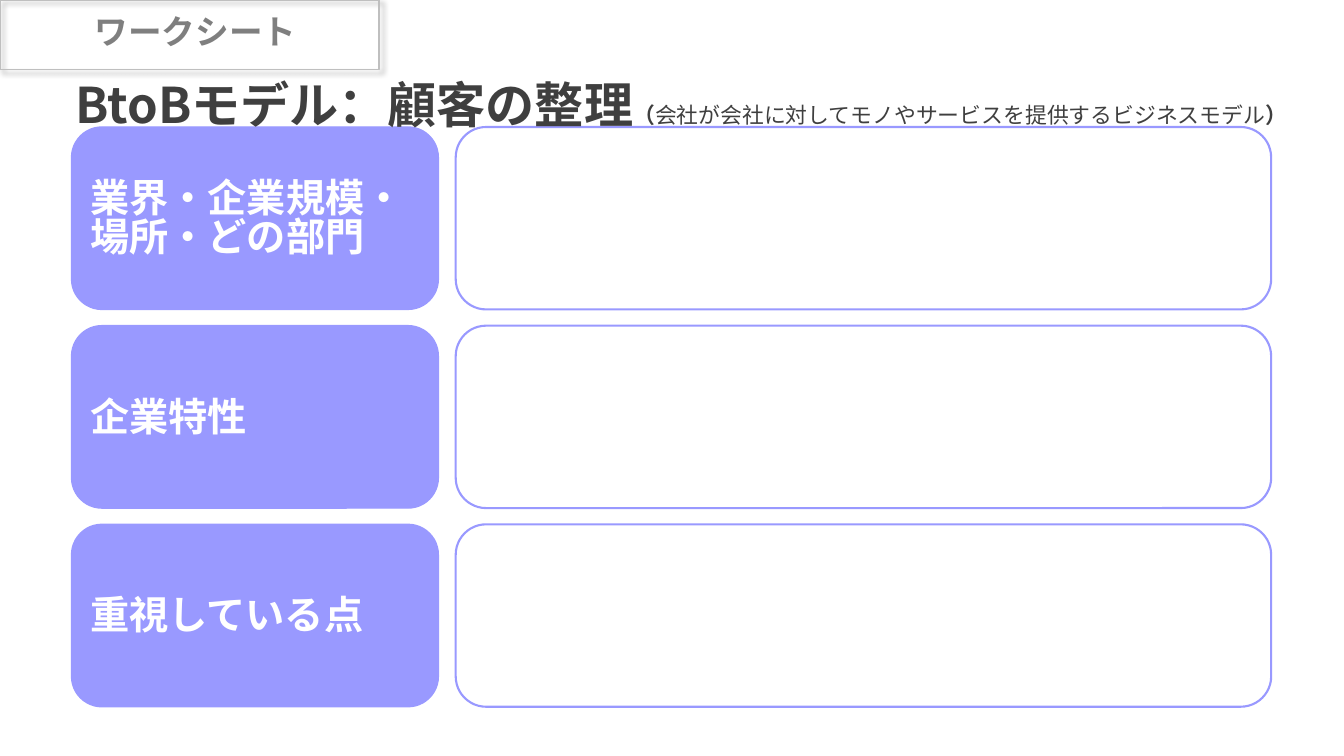
"""Build a worksheet slide for organising the customers of a BtoB business."""
from dataclasses import dataclass

from lxml import etree
from pptx import Presentation
from pptx.dml.color import RGBColor
from pptx.enum.shapes import MSO_SHAPE
from pptx.enum.text import MSO_ANCHOR, MSO_AUTO_SIZE, PP_ALIGN
from pptx.oxml.ns import qn
from pptx.shapes.autoshape import Shape
from pptx.slide import Slide
from pptx.text.text import TextFrame, _Paragraph, _Run
from pptx.util import Pt

RECTANGLE = MSO_SHAPE.RECTANGLE
ROUNDED = MSO_SHAPE.ROUNDED_RECTANGLE
MIDDLE = MSO_ANCHOR.MIDDLE
BOTTOM = MSO_ANCHOR.BOTTOM
GROW = MSO_AUTO_SIZE.SHAPE_TO_FIT_TEXT
LEFT = PP_ALIGN.LEFT
CENTER = PP_ALIGN.CENTER


@dataclass(frozen=True)
class Theme:
    font: str = "Noto Sans CJK JP"
    accent: str = "9999FF"
    label: str = "FFFFFF"
    title: str = "3F3F3F"
    tag: str = "7F7F7F"
    tag_line: str = "BFBFBF"
    shadow: str = "000000"
    title_size: float = 35.1
    note_size: float = 15.6
    label_size: float = 28
    tag_size: float = 24
    title_spacing: float = 0.9
    text_spacing: float = 0.83


@dataclass(frozen=True)
class Box:
    left: float
    top: float
    width: float
    height: float

    def lengths(self) -> tuple[Pt, Pt, Pt, Pt]:
        return Pt(self.left), Pt(self.top), Pt(self.width), Pt(self.height)


@dataclass(frozen=True)
class TitlePart:
    text: str
    size: float
    bold: bool


THEME = Theme()
TITLE_BOX = Box(31, 46, 911.5, 49.7)
TAG_FRAME = Box(0, 0, 270.7, 49.7)
TAG_TEXT = Box(8.6, 9.4, 262, 36)
ROW_TOP, ROW_PITCH, ROW_HEIGHT = 90.7, 141.9, 130.3
LABEL_LEFT, LABEL_WIDTH = 51.1, 262
ANSWER_LEFT, ANSWER_WIDTH = 325.5, 582.5
ROW_LABELS = ("業界・企業規模・\n場所・どの部門", "企業特性", "重視している点")
TITLE_PARTS = (
    TitlePart("BtoBモデル：顧客の整理", THEME.title_size, True),
    TitlePart("（", THEME.note_size, True),
    TitlePart("会社が会社に対してモノやサービスを提供するビジネスモデル", THEME.note_size, False),
    TitlePart("）", THEME.note_size, True),
)


def format_run(run: _Run, size: float, color: str, bold: bool = True) -> None:
    run.font.size = Pt(size)
    run.font.bold = bold
    run.font.color.rgb = RGBColor.from_string(color)
    run.font.name = THEME.font
    east_asian = etree.Element(qn("a:ea"), typeface=THEME.font)
    run.font._element.find(qn("a:latin")).addnext(east_asian)


def format_paragraph(paragraph: _Paragraph, size: float, color: str, alignment: PP_ALIGN) -> None:
    paragraph.alignment = alignment
    paragraph.line_spacing = THEME.text_spacing
    for run in paragraph.runs:
        format_run(run, size, color)


def set_margins(frame: TextFrame, side: float, top: float, bottom: float) -> None:
    frame.word_wrap = True
    frame.margin_left = frame.margin_right = Pt(side)
    frame.margin_top, frame.margin_bottom = Pt(top), Pt(bottom)


def outline(shape: Shape, color: str, width: float) -> None:
    shape.fill.background()
    shape.line.color.rgb = RGBColor.from_string(color)
    shape.line.width = Pt(width)
    shape.shadow.inherit = False


def add_answer(slide: Slide, box: Box) -> None:
    outline(slide.shapes.add_shape(ROUNDED, *box.lengths()), THEME.accent, 1.5)


def add_label(slide: Slide, box: Box, text: str) -> None:
    shape = slide.shapes.add_shape(ROUNDED, *box.lengths())
    outline(shape, THEME.accent, 1)
    shape.fill.solid()
    shape.fill.fore_color.rgb = RGBColor.from_string(THEME.accent)
    frame = shape.text_frame
    set_margins(frame, 7.2, 3.6, 0)
    frame.vertical_anchor = MIDDLE
    frame.text = text
    for paragraph in frame.paragraphs:
        format_paragraph(paragraph, THEME.label_size, THEME.label, LEFT)


def add_title(slide: Slide) -> None:
    frame = slide.shapes.add_textbox(*TITLE_BOX.lengths()).text_frame
    set_margins(frame, 0, 0, 0)
    frame.vertical_anchor = BOTTOM
    paragraph = frame.paragraphs[0]
    paragraph.alignment = CENTER
    paragraph.line_spacing = THEME.title_spacing
    for part in TITLE_PARTS:
        run = paragraph.add_run()
        run.text = part.text
        format_run(run, part.size, THEME.title, part.bold)


def add_shadow(shape: Shape) -> None:
    effects = shape._element.spPr.find(qn("a:effectLst"))
    shadow = etree.SubElement(
        effects, qn("a:outerShdw"), blurRad=str(Pt(4)), dist=str(Pt(3)),
        dir="2700000", algn="tl", rotWithShape="0",
    )
    color = etree.SubElement(shadow, qn("a:srgbClr"), val=THEME.shadow)
    etree.SubElement(color, qn("a:alpha"), val="40000")


def add_tag(slide: Slide) -> None:
    group = slide.shapes.add_group_shape()
    tag_frame = group.shapes.add_shape(RECTANGLE, *TAG_FRAME.lengths())
    outline(tag_frame, THEME.tag_line, 1)
    add_shadow(tag_frame)
    frame = group.shapes.add_textbox(*TAG_TEXT.lengths()).text_frame
    set_margins(frame, 7.2, 3.6, 3.6)
    frame.auto_size = GROW
    frame.text = "ワークシート"
    format_paragraph(frame.paragraphs[0], THEME.tag_size, THEME.tag, CENTER)


def main() -> None:
    presentation = Presentation()
    presentation.slide_width, presentation.slide_height = Pt(960), Pt(540)
    slide = presentation.slides.add_slide(presentation.slide_layouts[6])
    for index, text in enumerate(ROW_LABELS):
        top = ROW_TOP + index * ROW_PITCH
        add_answer(slide, Box(ANSWER_LEFT, top, ANSWER_WIDTH, ROW_HEIGHT))
        add_label(slide, Box(LABEL_LEFT, top, LABEL_WIDTH, ROW_HEIGHT), text)
    add_title(slide)
    add_tag(slide)
    presentation.save("out.pptx")


if __name__ == "__main__":
    main()
